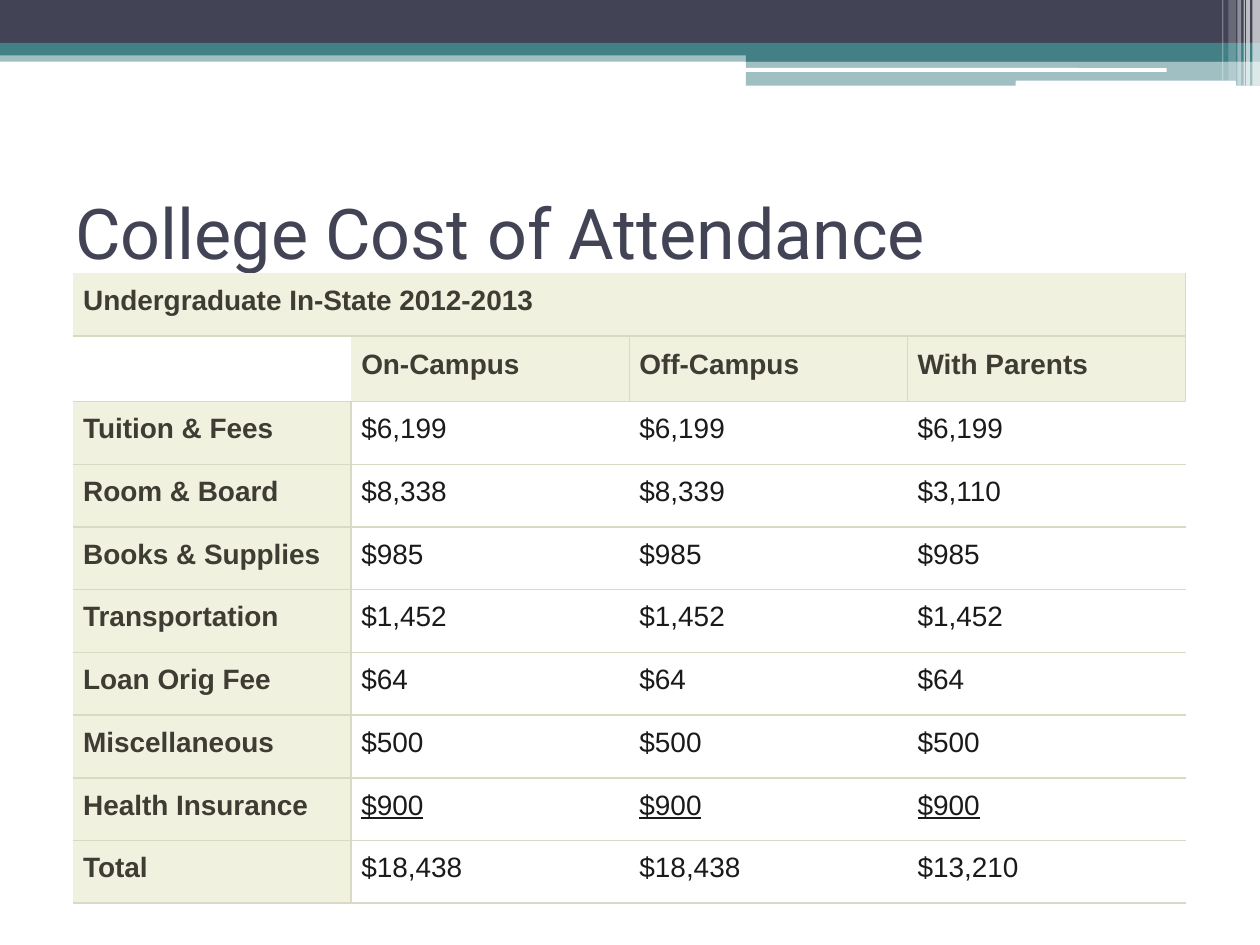
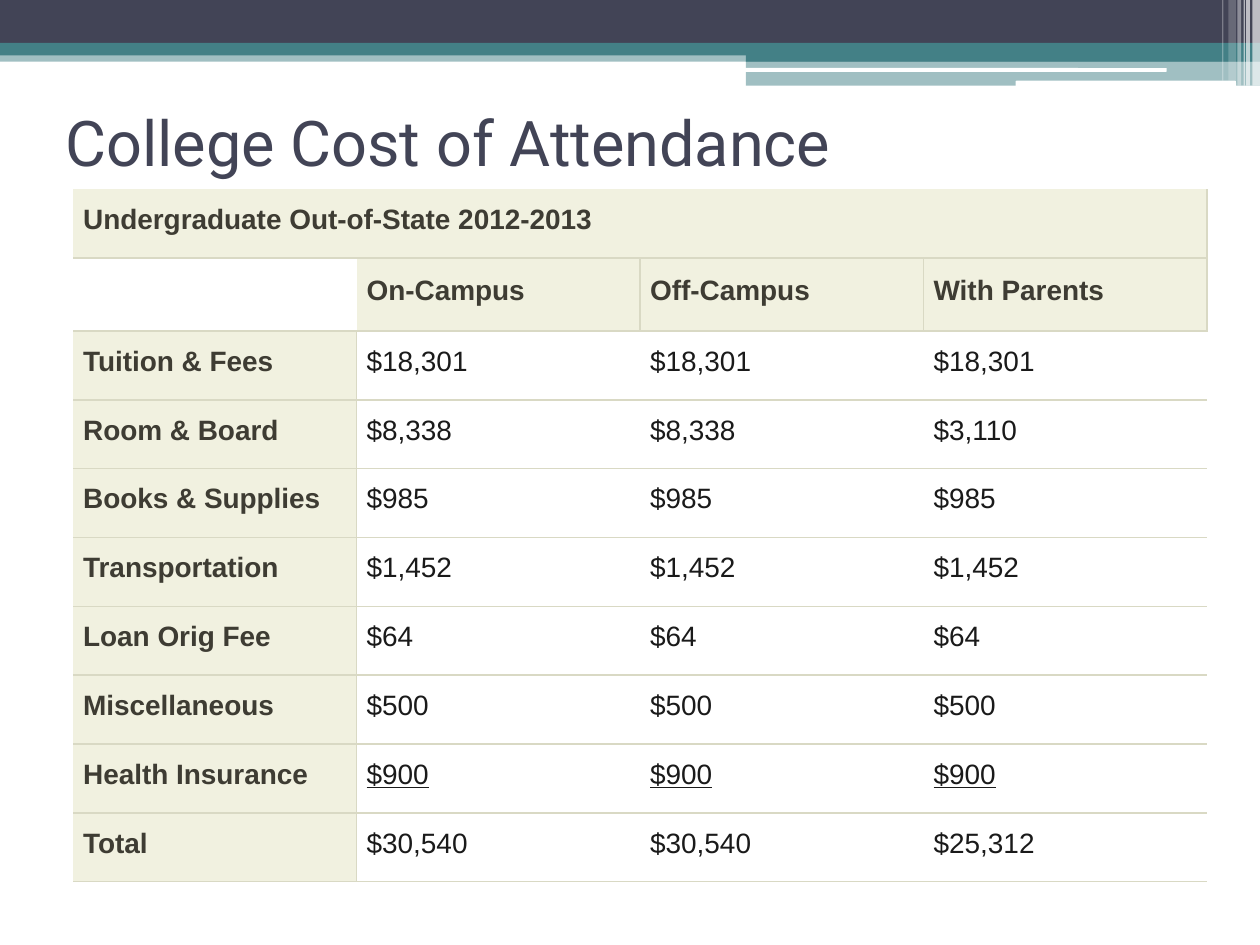
from dataclasses import dataclass

from lxml import etree
from pptx import Presentation
from pptx.dml.color import RGBColor
from pptx.enum import shapes, text
from pptx.oxml.ns import qn
from pptx.util import Inches, Pt


@dataclass(frozen=True)
class Theme:
    navy: str = "424456"
    teal: str = "438086"
    white: str = "FFFFFF"
    cell_fill: str = "F1F1E0"
    rule: str = "D9D9C4"
    label: str = "3E3C33"
    value: str = "1A1A1A"
    title_font: str = "Roboto"
    table_font: str = "Arial"
    table_size: int = 16


theme = Theme()


def write_text(frame, words, font, size, color, bold=False, underline=False,
               line_spacing=None, space_after=None):
    frame.word_wrap = True
    para = frame.paragraphs[0]
    para.line_spacing = line_spacing
    para.space_after = space_after
    span = para.add_run()
    span.text = words
    span.font.name = font
    span.font.size = Pt(size)
    span.font.bold = bold
    span.font.underline = underline
    span.font.color.rgb = RGBColor.from_string(color)


def add_border(cell, side, visible):
    line = etree.SubElement(cell._tc.get_or_add_tcPr(), qn(f"a:ln{side}"), w=str(Pt(1)))
    if visible:
        fill = etree.SubElement(line, qn("a:solidFill"))
        etree.SubElement(fill, qn("a:srgbClr"), val=theme.rule)
    else:
        etree.SubElement(line, qn("a:noFill"))


RECT = shapes.MSO_SHAPE.RECTANGLE
ROUND = shapes.MSO_SHAPE.ROUNDED_RECTANGLE
NO_TABLE_STYLE = "{2D5ABB26-0587-4C30-8999-92F81FD0307C}"

bands = [
    (RECT, 0, 0.4, 10, 0.09, theme.teal, 50),
    (RECT, 0, 0, 10, 0.34, theme.navy, 100),
    (RECT, 0, 0.34, 10, 0.1, theme.teal, 100),
    (RECT, 5.92, 0.39, 4.08, 0.1, theme.teal, 100),
    (RECT, 5.92, 0.48, 4.08, 0.2, theme.teal, 50),
    (ROUND, 5.91, 0.54, 3.35, 0.03, theme.white, 100),
    (ROUND, 8.06, 0.64, 1.75, 0.05, theme.white, 100),
]
stripes = [
    (9.94, 0.06, 0.68, 65),
    (9.89, 0.03, 0.68, 65),
    (9.87, 0.01, 0.68, 60),
    (9.82, 0.03, 0.68, 40),
    (9.75, 0.06, 0.64, 20),
    (9.7, 0.01, 0.64, 30),
]
bands += [(RECT, left, 0, width, height, theme.white, opacity)
          for left, width, height, opacity in stripes]

headers = ["", "On-Campus", "Off-Campus", "With Parents"]
shared_costs = [
    ["Books & Supplies"] + ["$985"] * 3,
    ["Transportation"] + ["$1,452"] * 3,
    ["Loan Orig Fee"] + ["$64"] * 3,
    ["Miscellaneous"] + ["$500"] * 3,
    ["Health Insurance"] + ["$900"] * 3,
]
pages = [
    dict(
        title_at=(0.5, 1.25, 9, 1.17), title_size=40,
        table_at=(0.58, 2.17, 8.83, 5), header_height=0.52,
        caption="Undergraduate In-State 2012-2013",
        tuition=["$6,199"] * 3,
        room=["$8,338", "$8,339", "$3,110"],
        total=["$18,438", "$18,438", "$13,210"],
    ),
    dict(
        title_at=(0.42, 0.75, 9, 0.75), title_size=36,
        table_at=(0.58, 1.5, 9, 5.5), header_height=0.58,
        caption="Undergraduate Out-of-State 2012-2013",
        tuition=["$18,301"] * 3,
        room=["$8,338", "$8,338", "$3,110"],
        total=["$30,540", "$30,540", "$25,312"],
    ),
]

deck = Presentation()
deck.slide_width = Inches(10)
deck.slide_height = Inches(7.5)

for content in pages:
    page = deck.slides.add_slide(deck.slide_layouts[6])

    for kind, left, top, width, height, color, opacity in bands:
        band = page.shapes.add_shape(kind, Inches(left), Inches(top), Inches(width), Inches(height))
        band.shadow.inherit = False
        band.line.fill.background()
        band.fill.solid()
        band.fill.fore_color.rgb = RGBColor.from_string(color)
        if opacity < 100:
            swatch = band._element.spPr.find(f"{qn('a:solidFill')}/{qn('a:srgbClr')}")
            etree.SubElement(swatch, qn("a:alpha"), val=str(opacity * 1000))

    title = page.shapes.add_textbox(*map(Inches, content["title_at"])).text_frame
    title.vertical_anchor = text.MSO_ANCHOR.MIDDLE
    write_text(title, "College Cost of Attendance", font=theme.title_font,
               size=content["title_size"], color=theme.navy)

    rows = [
        [content["caption"], "", "", ""],
        headers,
        ["Tuition & Fees"] + content["tuition"],
        ["Room & Board"] + content["room"],
        *shared_costs,
        ["Total"] + content["total"],
    ]
    frame = page.shapes.add_table(len(rows), len(headers), *map(Inches, content["table_at"]))
    table = frame.table
    table._tbl.tblPr.find(qn("a:tableStyleId")).text = NO_TABLE_STYLE
    table.first_row = table.horz_banding = False
    table.cell(0, 0).merge(table.cell(0, len(headers) - 1))

    table_width, table_height = content["table_at"][2:]
    for column in table.columns:
        column.width = Inches(table_width / len(headers))
    for row in table.rows:
        row.height = Inches((table_height - content["header_height"]) / (len(rows) - 1))
    table.rows[1].height = Inches(content["header_height"])

    for r, row in enumerate(rows):
        for c, words in enumerate(row):
            cell = table.cell(r, c)
            if cell.is_spanned:
                continue
            heading = bool(words) and (r < 2 or c == 0)
            add_border(cell, "L", (r == 1 and c > 1) or (r > 1 and c == 1))
            add_border(cell, "R", heading)
            add_border(cell, "T", r > 0)
            add_border(cell, "B", True)
            if heading:
                cell.fill.solid()
                cell.fill.fore_color.rgb = RGBColor.from_string(theme.cell_fill)
            else:
                cell.fill.background()
            cell.vertical_anchor = text.MSO_ANCHOR.MIDDLE
            cell.margin_left = cell.margin_right = Inches(0.08)
            cell.margin_top = cell.margin_bottom = Inches(0.05)
            if words:
                write_text(cell.text_frame, words, font=theme.table_font, size=theme.table_size,
                           color=theme.label if heading else theme.value, bold=heading,
                           underline=not heading and row[0] == "Health Insurance",
                           line_spacing=Pt(13.5), space_after=Pt(10))

deck.save("out.pptx")
